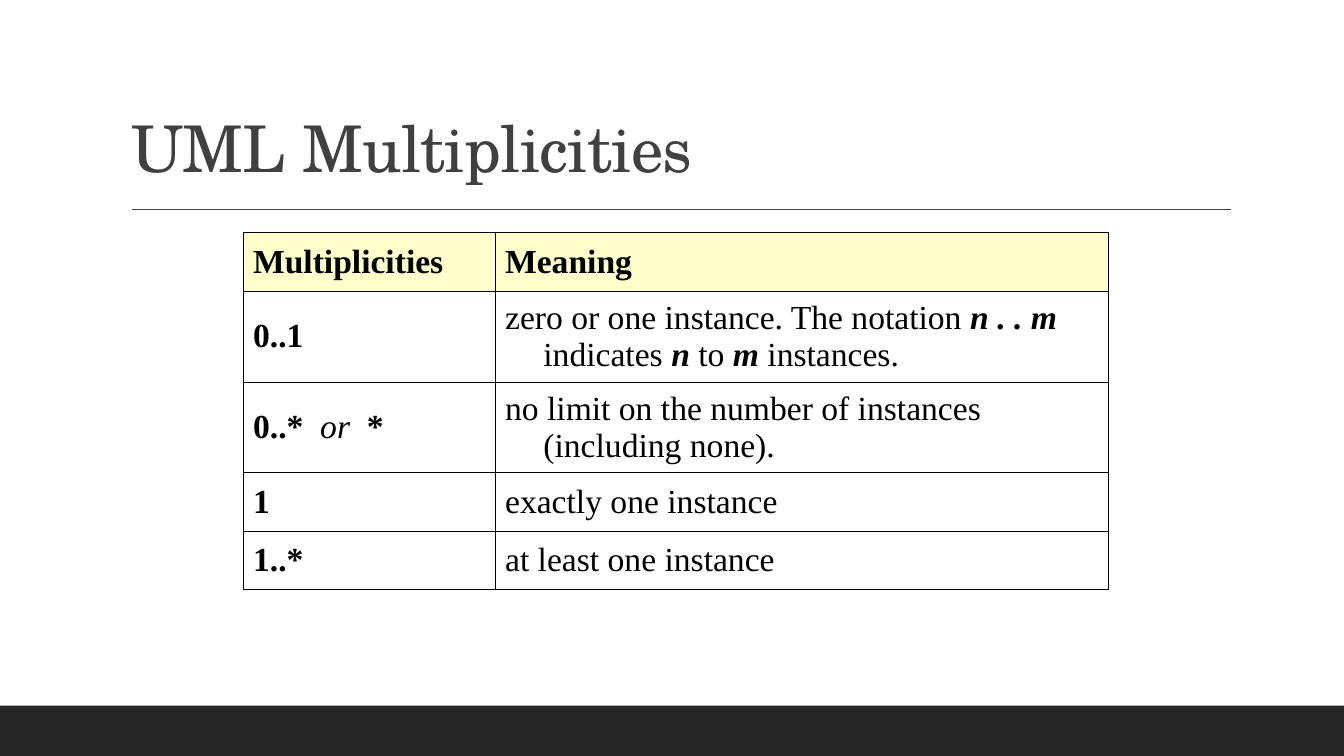
from dataclasses import dataclass
from typing import Any, NamedTuple

from lxml.etree import SubElement
from pptx import Presentation
from pptx.dml.color import RGBColor as RGB
from pptx.enum.shapes import MSO_CONNECTOR as Link, MSO_SHAPE as Shape
from pptx.enum.text import MSO_ANCHOR as Anchor, MSO_AUTO_SIZE as Fit, PP_ALIGN as Align
from pptx.oxml import parse_xml
from pptx.oxml.ns import nsdecls, qn
from pptx.util import Pt

PX = 9144  # 100 px to the inch


@dataclass(frozen=True)
class Theme:
    bar: RGB = RGB(0x26, 0x26, 0x26)
    title: RGB = RGB(0x40, 0x40, 0x40)
    text: RGB = RGB(0, 0, 0)
    head: RGB = RGB(0xFF, 0xFF, 0xCC)
    serif: str = "TeX Gyre Schola"
    roman: str = "Times New Roman"
    big: int = 46
    body: int = 24
    rule: float = 1
    border: float = 0.75


class Span(NamedTuple):
    text: str
    bold: bool = False
    slant: bool = False


class Row(NamedTuple):
    high: int
    cells: list[list[Span]]


THEME = Theme()
COLS = [250, 608]
ROWS = [
    Row(58, [[Span("Multiplicities", True)], [Span("Meaning", True)]]),
    Row(90, [[Span("0..1", True)], [
        Span("zero or one instance. The notation "), Span("n . . m", True, True),
        Span(" indicates "), Span("n", True, True), Span(" to "),
        Span("m", True, True), Span(" instances.")]]),
    Row(90, [[Span("0..*", True), Span("  or  ", slant=True), Span("*", True)],
             [Span("no limit on the number of instances (including none).")]]),
    Row(58, [[Span("1", True)], [Span("exactly one instance")]]),
    Row(58, [[Span("1..*", True)], [Span("at least one instance")]]),
]


def px(*sizes: int) -> list[int]:
    return [size * PX for size in sizes]


def assign(item: Any, values: dict[str, Any]) -> None:
    for name, value in values.items():
        setattr(item, name, value)


def style(font: Any, face: str, size: int, color: RGB, **more: bool) -> None:
    assign(font, {"name": face, "size": Pt(size), **more})
    font.color.rgb = color


def add_bar(slide: Any) -> None:
    bar = slide.shapes.add_shape(Shape.RECTANGLE, *px(0, 700, 1333, 50))
    bar.shadow.inherit = False
    bar.fill.solid()
    bar.fill.fore_color.rgb = THEME.bar
    bar.line.fill.background()


def add_rule(slide: Any) -> None:
    rule = slide.shapes.add_connector(Link.STRAIGHT, *px(131, 208, 1221, 208))
    rule.line.color.rgb = THEME.title
    rule.line.width = Pt(THEME.rule)
    SubElement(rule.element.spPr, qn("a:effectLst"))


def set_title(slide: Any, text: str) -> None:
    title = slide.shapes.title
    assign(title, dict(zip(("left", "top", "width", "height"), px(120, 31, 1100, 159))))
    frame = title.text_frame
    assign(frame, {"text": text, "vertical_anchor": Anchor.BOTTOM,
                   "word_wrap": True, "auto_size": Fit.NONE})
    para = frame.paragraphs[0]
    assign(para, {"alignment": Align.LEFT, "line_spacing": 0.9})
    font = para.runs[0].font
    style(font, THEME.serif, THEME.big, THEME.title)
    para.runs[0]._r.get_or_add_rPr().set("spc", "-50")


def add_borders(cell: Any) -> None:
    """Line all four sides; the lines must come before the fill."""
    props = cell._tc.get_or_add_tcPr()
    for spot, side in enumerate("LRTB"):
        props.insert(spot, parse_xml(
            f'<a:ln{side} {nsdecls("a")} w="{Pt(THEME.border)}"><a:solidFill>'
            f'<a:srgbClr val="{THEME.text}"/></a:solidFill></a:ln{side}>'))


def fill_cell(cell: Any, spans: list[Span], head: bool) -> None:
    wide, thin = px(10, 5)
    assign(cell, {"vertical_anchor": Anchor.MIDDLE, "margin_left": wide,
                  "margin_right": wide, "margin_top": thin, "margin_bottom": thin})
    if head:
        cell.fill.solid()
        cell.fill.fore_color.rgb = THEME.head
    else:
        cell.fill.background()
    add_borders(cell)
    para = cell.text_frame.paragraphs[0]
    hang = px(38)[0]
    props = para._p.get_or_add_pPr()
    props.set("marL", str(hang))
    props.set("indent", str(-hang))
    for span in spans:
        run = para.add_run()
        run.text = span.text
        style(run.font, THEME.roman, THEME.body, THEME.text,
              bold=span.bold, italic=span.slant)


def add_grid(slide: Any) -> None:
    high = sum(row.high for row in ROWS)
    grid = slide.shapes.add_table(
        len(ROWS), len(COLS), *px(241, 231, sum(COLS), high)).table
    assign(grid, {"first_row": False, "horz_banding": False})
    for col, wide in zip(grid.columns, px(*COLS)):
        col.width = wide
    for spot, row in enumerate(ROWS):
        grid.rows[spot].height = px(row.high)[0]
        for cell, spans in zip(grid.rows[spot].cells, row.cells):
            fill_cell(cell, spans, spot == 0)


def main() -> None:
    deck = Presentation()
    deck.slide_width, deck.slide_height = px(1333, 750)
    slide = deck.slides.add_slide(deck.slide_layouts[5])
    add_bar(slide)
    add_rule(slide)
    set_title(slide, "UML Multiplicities")
    add_grid(slide)
    deck.save("out.pptx")


if __name__ == "__main__":
    main()
